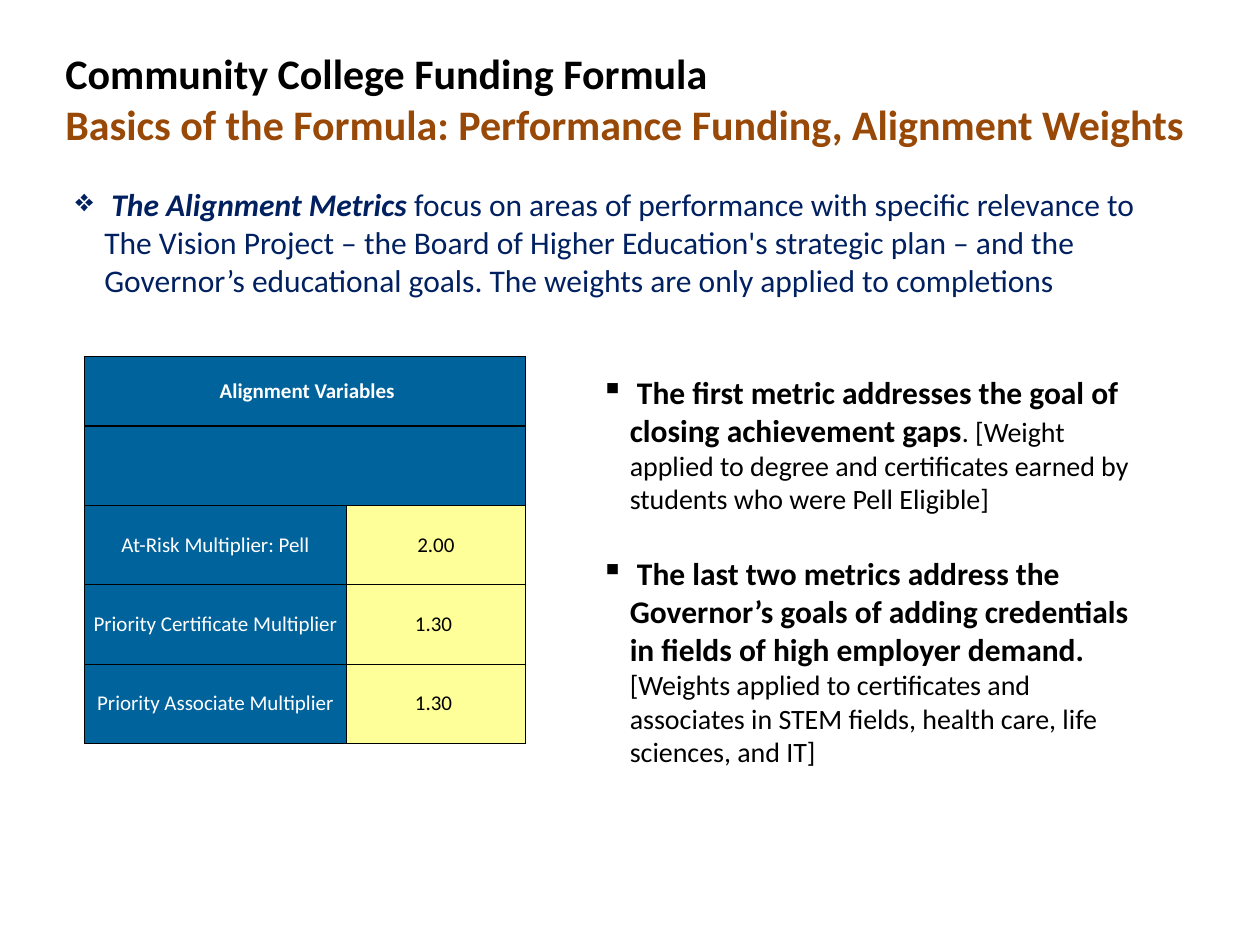
import pptx
import pptx.util
import pptx.enum.text
import pptx.dml.color
import pptx.oxml
import pptx.oxml.ns

Inches = pptx.util.Inches
Pt = pptx.util.Pt
RGB = pptx.dml.color.RGBColor
BLACK = RGB(0x00, 0x00, 0x00)
WHITE = RGB(0xFF, 0xFF, 0xFF)
BROWN = RGB(0x98, 0x48, 0x07)
NAVY = RGB(0x00, 0x20, 0x60)
BLUE = RGB(0x00, 0x63, 0x9C)
YELLOW = RGB(0xFF, 0xFF, 0x99)


class Deck:
    """Holds the text style and the current slide."""

    font = "Calibri"
    indent = Inches(0.23)

    def __init__(self, width, height):
        self.prs = pptx.Presentation()
        self.prs.slide_width = Inches(width)
        self.prs.slide_height = Inches(height)
        self.slide = self.prs.slides.add_slide(self.prs.slide_layouts[6])

    def run(self, para, text, size, color, bold=False, italic=False):
        run = para.add_run()
        run.text = text
        font = run.font
        font.name, font.size = self.font, Pt(size)
        font.bold, font.italic = bold, italic
        font.color.rgb = color

    def bullet(self, para, char):
        props = para._p.get_or_add_pPr()
        props.set("marL", str(self.indent))
        props.set("indent", str(-self.indent))
        mark = pptx.oxml.parse_xml(f'<a:buChar {pptx.oxml.ns.nsdecls("a")} char="{char}"/>')
        props.append(mark)

    def text(self, left, top, width, height, paras, char=None, gap=0):
        box = self.slide.shapes.add_textbox(
            Inches(left), Inches(top), Inches(width), Inches(height))
        frame = box.text_frame
        frame.word_wrap = True
        for i, runs in enumerate(paras):
            para = frame.add_paragraph() if i else frame.paragraphs[0]
            if i and gap:
                para.space_before = Pt(gap)
            if char:
                self.bullet(para, char)
            for run in runs:
                self.run(para, *run)

    def border(self, cell, **widths):
        props = cell._tc.get_or_add_tcPr()
        for i, side in enumerate("LRTB"):
            line = pptx.oxml.parse_xml(
                f'<a:ln{side} {pptx.oxml.ns.nsdecls("a")} w="{Pt(widths[side])}">'
                f'<a:solidFill><a:srgbClr val="{BLACK}"/></a:solidFill></a:ln{side}>')
            props.insert(i, line)

    def cell(self, cell, text, fill, color, bold):
        cell.fill.solid()
        cell.fill.fore_color.rgb = fill
        cell.margin_left = cell.margin_right = 0
        cell.margin_top = cell.margin_bottom = 0
        cell.vertical_anchor = pptx.enum.text.MSO_ANCHOR.MIDDLE
        para = cell.text_frame.paragraphs[0]
        para.alignment = pptx.enum.text.PP_ALIGN.CENTER
        if text:
            self.run(para, text, 12, color, bold)

    def table(self, left, top, cols, rows, data):
        table = self.slide.shapes.add_table(
            len(rows), len(cols), Inches(left), Inches(top),
            Inches(sum(cols)), Inches(sum(rows))).table
        table.first_row = table.horz_banding = False
        for col, width in zip(table.columns, cols):
            col.width = Inches(width)
        for row, height in zip(table.rows, rows):
            row.height = Inches(height)
        last = len(rows) - 1
        for i, texts in enumerate(data):
            wide = len(texts) == 1
            if wide:
                table.cell(i, 0).merge(table.cell(i, len(cols) - 1))
            for j in range(len(cols)):
                cell = table.cell(i, j)
                value = j > 0 and not wide
                self.cell(cell, texts[j] if j < len(texts) else "",
                          YELLOW if value else BLUE,
                          BLACK if value else WHITE, i == 0)
                self.border(cell,
                            L=1 if i == 0 else 0.5,
                            R=1 if wide or j else 0.5,
                            T=1 if i < 2 else 0.5,
                            B=1 if i in (0, last) else 0.5)


def main():
    deck = Deck(10, 7.5)
    deck.text(0.42, 0.33, 9.25, 0.91, [
        [("Community College Funding Formula", 24, BLACK, True)],
        [("Basics of the Formula: Performance Funding, Alignment Weights",
          24, BROWN, True)],
    ])
    deck.text(0.5, 1.42, 8.83, 1.01, [[
        (" The Alignment Metrics", 18, NAVY, True, True),
        (" focus on areas of performance with specific relevance to "
         "The Vision Project – the Board of Higher Education's strategic plan "
         "– and the Governor’s educational goals. "
         "The weights are only applied to completions", 18, NAVY),
    ]], "❖")
    deck.table(0.67, 2.83, [2.08, 1.42], [0.55] + [0.63] * 4, [
        [" Alignment Variables"],
        [""],
        ["At-Risk Multiplier: Pell", "2.00"],
        ["Priority Certificate Multiplier", "1.30 "],
        ["Priority Associate Multiplier", "1.30 "],
    ])
    goals = [
        ("The first metric addresses the goal of closing achievement gaps",
         ". [Weight applied to degree and certificates earned by "
         "students who were Pell Eligible]"),
        ("The last two metrics address the Governor’s goals of adding "
         "credentials in fields of high employer demand. ",
         "[Weights applied to certificates and associates in STEM fields, "
         "health care, life sciences, and IT]"),
    ]
    deck.text(4.67, 2.91, 4.42, 3, [
        [(" ", 18, BLACK), (goal, 18, BLACK, True), (note, 16, BLACK)]
        for goal, note in goals
    ], "▪", 22)
    deck.prs.save("out.pptx")


if __name__ == "__main__":
    main()
